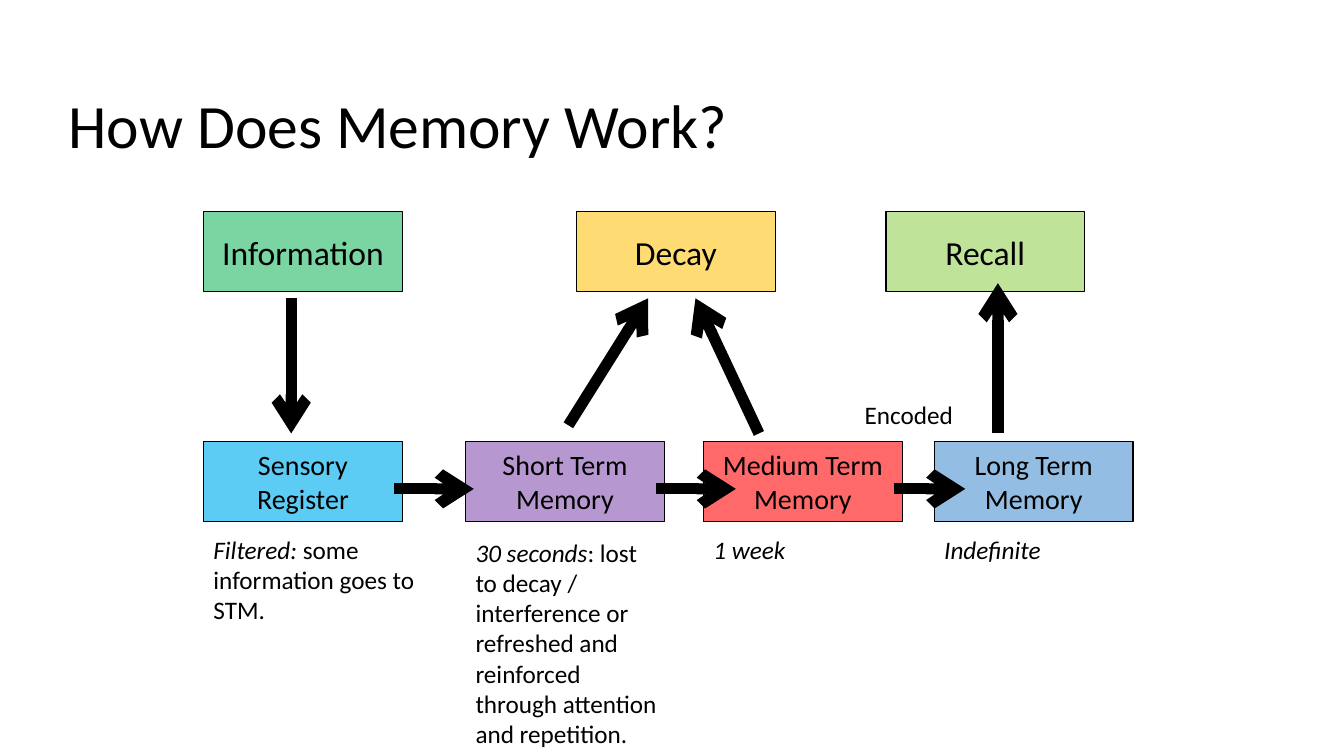
from lxml.etree import SubElement
from pptx import Presentation
from pptx.dml.color import RGBColor
from pptx.enum.shapes import MSO_CONNECTOR as CONN, MSO_SHAPE as SHAPE
from pptx.enum.text import MSO_ANCHOR as ANCHOR, PP_ALIGN as ALIGN
from pptx.oxml.ns import qn
from pptx.util import Pt

FONT = "Calibri"
BLACK = "000000"
BOX_W, BOX_H = 142, 57
STAGE_Y = 164.2

OUTCOMES = [
    (0, "Information", "00B050", 52),
    (266.4, "Decay", "FFC000", 55),
    (487.4, "Recall", "92D050", 58),
]
STAGES = [
    (0, "Sensory Register", "00B0F0", 64),
    (187.2, "Short Term Memory", "7030A0", 50),
    (357.1, "Medium Term Memory", "FF0000", 59),
    (522, "Long Term Memory", "5B9BD5", 65),
]
NOTES = [
    (226.8, 158.4, 73, "Filtered:", " some information goes to STM."),
    (228.9, 147.6, 160, "30 seconds",
     ": lost to decay / interference or refreshed and reinforced "
     "through attention and repetition."),
    (226.8, 118.8, 29, "1 week", ""),
    (226.8, 158.4, 29, "Indefinite", ""),
]
FLOWS = [
    (62.6, 61.9, 62.6, 158.4),
    (260.6, 152.6, 317.5, 61.9),
    (396.7, 158.4, 351.4, 61.9),
    (567.4, 158.4, 567.4, 51.1),
]
STEP_LENGTHS = [57, 57, 51]


def color(value):
    return RGBColor.from_string(value)


def set_font(p, size):
    p.font.name = FONT
    p.font.size = Pt(size)
    p.font.color.rgb = color(BLACK)


def add_title(s, x, y, w, h):
    sp = s.shapes.title
    sp.left, sp.top, sp.width, sp.height = Pt(x), Pt(y), Pt(w), Pt(h)
    tf = sp.text_frame
    tf.text = "How Does Memory Work?"
    tf.vertical_anchor = ANCHOR.MIDDLE
    p = tf.paragraphs[0]
    p.alignment = ALIGN.LEFT
    p.line_spacing = 0.9
    set_font(p, 44)


def add_box(s, x, y, text, fill, alpha, size):
    sp = s.shapes.add_shape(SHAPE.RECTANGLE, Pt(x), Pt(y), Pt(BOX_W), Pt(BOX_H))
    sp.shadow.inherit = False
    sp.fill.solid()
    sp.fill.fore_color.rgb = color(fill)
    clr = sp._element.spPr.find(qn("a:solidFill"))[0]
    SubElement(clr, qn("a:alpha"), val=str(alpha * 1000))
    sp.line.color.rgb = color(BLACK)
    sp.line.width = Pt(1)
    tf = sp.text_frame
    tf.word_wrap = True
    tf.vertical_anchor = ANCHOR.MIDDLE
    tf.text = text
    p = tf.paragraphs[0]
    p.alignment = ALIGN.CENTER
    set_font(p, size)


def add_arrow(s, x1, y1, x2, y2):
    c = s.shapes.add_connector(CONN.STRAIGHT, Pt(x1), Pt(y1), Pt(x2), Pt(y2))
    c.line.color.rgb = color(BLACK)
    c.line.width = Pt(8)
    SubElement(c.line._get_or_add_ln(), qn("a:tailEnd"), type="arrow")
    SubElement(c._element.spPr, qn("a:effectLst"))


def add_note(s, x, y, w, h, lead, rest):
    tf = s.shapes.add_textbox(Pt(x), Pt(y), Pt(w), Pt(h)).text_frame
    tf.word_wrap = True
    p = tf.paragraphs[0]
    set_font(p, 18)
    for text, italic in ((lead, True), (rest, False)):
        if text:
            r = p.add_run()
            r.text = text
            r.font.italic = italic


def add_diagram(s, x, y):
    for dx, text, fill, alpha in OUTCOMES:
        add_box(s, x + dx, y, text, fill, alpha, 24)
    for dx, text, fill, alpha in STAGES:
        add_box(s, x + dx, y + STAGE_Y, text, fill, alpha, 20)
    for x1, y1, x2, y2 in FLOWS:
        add_arrow(s, x + x1, y + y1, x + x2, y + y2)
    for (dx, *_), length in zip(STAGES, STEP_LENGTHS):
        start, mid = x + dx + 136, y + 198
        add_arrow(s, start, mid, start + length, mid)
    for (dx, *_), (dy, w, h, lead, rest) in zip(STAGES, NOTES):
        add_note(s, x + dx, y + dy, w, h, lead, rest)
    add_note(s, x + 465.1, y + 130.3, 90.7, 29, "", "Encoded")


def main():
    prs = Presentation()
    prs.slide_width, prs.slide_height = Pt(960), Pt(540)
    s = prs.slides.add_slide(prs.slide_layouts[5])
    add_title(s, 41.8, 55.4, 648, 72.7)
    add_diagram(s, 145.4, 151.2)
    prs.save("out.pptx")


if __name__ == "__main__":
    main()
